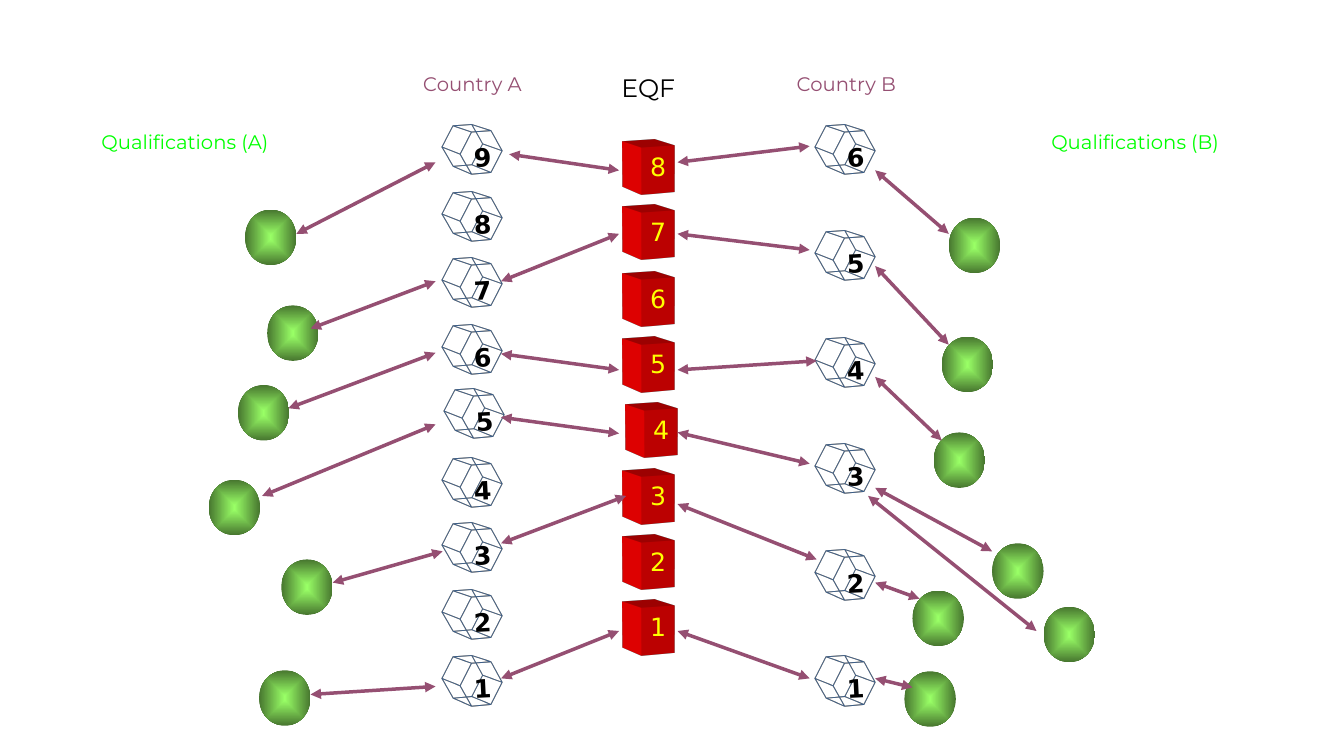
from lxml import etree
from pptx import Presentation
from pptx.dml.color import RGBColor
from pptx.enum.shapes import MSO_CONNECTOR, MSO_SHAPE
from pptx.enum.text import MSO_AUTO_SIZE, PP_ALIGN
from pptx.oxml.ns import qn
from pptx.util import Pt

STRAIGHT = MSO_CONNECTOR.STRAIGHT
OVAL, HEXAGON, RECTANGLE = MSO_SHAPE.OVAL, MSO_SHAPE.HEXAGON, MSO_SHAPE.RECTANGLE
GROW = MSO_AUTO_SIZE.SHAPE_TO_FIT_TEXT
CENTER, LEFT = PP_ALIGN.CENTER, PP_ALIGN.LEFT
SCALE = 9144

BLACK, YELLOW, GREEN, PLUM = "000000", "FFFF00", "00FF00", "954F72"
AMBER, RED, WIRE_BLUE = "FFCC00", "FF0000", "385D8A"
BALL_LIGHT, BALL_DARK = "99FF66", "47762F"
HEADING_FONT, NUMBER_FONT = "Montserrat", "DejaVu Sans"

HEADINGS = [
    ("EQF", 580, 67, 126, 63, 18, BLACK),
    ("Сountry A", 405, 66, 127, 57, 14, PLUM),
    ("Country B", 776, 66, 127, 57, 14, PLUM),
    ("Qualifications (A)", 80, 124, 207, 34, 14, GREEN),
    ("Qualifications (B)", 1013, 124, 226, 34, 14, GREEN),
]
QUALIFICATIONS_A = [(243, 208), (265, 303), (236, 382), (207, 476), (279, 555), (257, 665)]
QUALIFICATIONS_B = [(941, 216), (934, 334), (926, 429), (984, 539), (1035, 602),
                    (905, 586), (897, 666)]
LINKS_A = [
    (294, 232, 432, 161), (308, 326, 432, 279), (286, 405, 432, 350),
    (260, 492, 432, 421), (330, 578, 439, 547), (308, 689, 432, 681),
]
LINKS_A_EQF = [
    (505, 153, 614, 169), (497, 279, 614, 232), (497, 351, 614, 367),
    (497, 414, 614, 430), (497, 539, 621, 492), (497, 673, 614, 626),
]
LINKS_B_EQF = [
    (803, 145, 672, 161), (803, 248, 672, 232), (810, 358, 672, 367),
    (803, 460, 672, 429), (810, 555, 672, 500), (803, 673, 672, 626),
]
LINKS_B = [
    (941, 232, 868, 169), (941, 342, 868, 264), (934, 437, 868, 374),
    (984, 547, 868, 484), (1028, 626, 861, 492), (912, 594, 868, 578),
    (905, 682, 868, 673),
]


def px(value):
    return round(value * SCALE)


def color(hex_string):
    return RGBColor.from_string(hex_string)


class Diagram:
    """Draws the elements of a level-mapping diagram on one slide."""

    def __init__(self, slide):
        self.slide = slide

    def text(self, words, left, top, width, height, size, hue,
             font=HEADING_FONT, bold=False, align=CENTER, shapes=None):
        shapes = shapes or self.slide.shapes
        shape = shapes.add_textbox(px(left), px(top), px(width), px(height))
        frame = shape.text_frame
        frame.word_wrap = False
        frame.auto_size = GROW
        paragraph = frame.paragraphs[0]
        paragraph.text = words
        paragraph.alignment = align
        paragraph.font.name = font
        paragraph.font.size = Pt(size)
        paragraph.font.bold = bold
        paragraph.font.color.rgb = color(hue)
        return shape

    def solid(self, shapes, kind, box, hue, material):
        shape = shapes.add_shape(kind, *map(px, box))
        shape.shadow.inherit = False
        shape.fill.solid()
        shape.fill.fore_color.rgb = color(hue)
        shape.line.fill.background()
        properties = shape._element.spPr
        scene = etree.SubElement(properties, qn("a:scene3d"))
        camera = etree.SubElement(scene, qn("a:camera"), prst="legacyPerspectiveFront")
        etree.SubElement(camera, qn("a:rot"), lat="600000", lon="20099999", rev="0")
        etree.SubElement(scene, qn("a:lightRig"), rig="legacyFlat3", dir="t")
        body = etree.SubElement(properties, qn("a:sp3d"),
                                extrusionH="430200", prstMaterial=material)
        extrusion = etree.SubElement(body, qn("a:extrusionClr"))
        etree.SubElement(extrusion, qn("a:srgbClr"), val=hue)
        return shape

    def cube(self, level, left, top):
        shapes = self.slide.shapes.add_group_shape().shapes
        self.solid(shapes, RECTANGLE, (left, top, 36, 47), RED, "legacyMatte")
        self.text(str(level), left, top, 36, 40, 18, YELLOW, NUMBER_FONT,
                  align=LEFT, shapes=shapes)

    def prism(self, level, left, top):
        shapes = self.slide.shapes.add_group_shape().shapes
        wire = self.solid(shapes, HEXAGON, (left, top, 47, 43), AMBER, "legacyWireframe")
        wire.adjustments[0] = 0.295
        wire.line.color.rgb = color(WIRE_BLUE)
        wire.line.width = Pt(0.75)
        number = self.text(str(level), left + 6, top + 6, 38, 40, 18, BLACK,
                           NUMBER_FONT, bold=True, align=LEFT, shapes=shapes)
        number.rotation = 357

    def ball(self, left, top):
        shape = self.slide.shapes.add_shape(OVAL, px(left), px(top), px(51), px(55))
        shape.shadow.inherit = False
        shape.line.fill.background()
        shape.fill.gradient()
        for stop, hue in zip(shape.fill.gradient_stops, (BALL_LIGHT, BALL_DARK)):
            stop.color.rgb = color(hue)
        gradient = shape._element.spPr.find(qn("a:gradFill"))
        gradient.remove(gradient.find(qn("a:lin")))
        shading = etree.SubElement(gradient, qn("a:path"), path="shape")
        etree.SubElement(shading, qn("a:fillToRect"),
                         l="50000", t="50000", r="50000", b="50000")

    def arrow(self, *ends):
        connector = self.slide.shapes.add_connector(STRAIGHT, *map(px, ends))
        connector.line.color.rgb = color(PLUM)
        connector.line.width = Pt(2.5)
        line = connector.line._get_or_add_ln()
        for end in ("a:headEnd", "a:tailEnd"):
            etree.SubElement(line, qn(end), type="triangle")
        etree.SubElement(connector._element.spPr, qn("a:effectLst"))


def main():
    presentation = Presentation()
    presentation.slide_width, presentation.slide_height = px(1333), px(750)
    diagram = Diagram(presentation.slides.add_slide(presentation.slide_layouts[6]))

    for row, level in enumerate(range(9, 0, -1)):
        nudge = 2 if level == 5 else 0
        diagram.prism(level, 454 + nudge, round(130 + 65.9 * row) - nudge)
    for row, level in enumerate(range(8, 0, -1)):
        diagram.cube(level, 638 if level == 4 else 635, round(145 + 65.3 * row))
    for row, level in enumerate(range(6, 0, -1)):
        diagram.prism(level, 824, round(130 + 105.4 * row))
    for corner in QUALIFICATIONS_A + QUALIFICATIONS_B:
        diagram.ball(*corner)
    for heading in HEADINGS:
        diagram.text(*heading)
    for ends in LINKS_A + LINKS_A_EQF + LINKS_B_EQF + LINKS_B:
        diagram.arrow(*ends)

    presentation.save("out.pptx")


if __name__ == "__main__":
    main()
